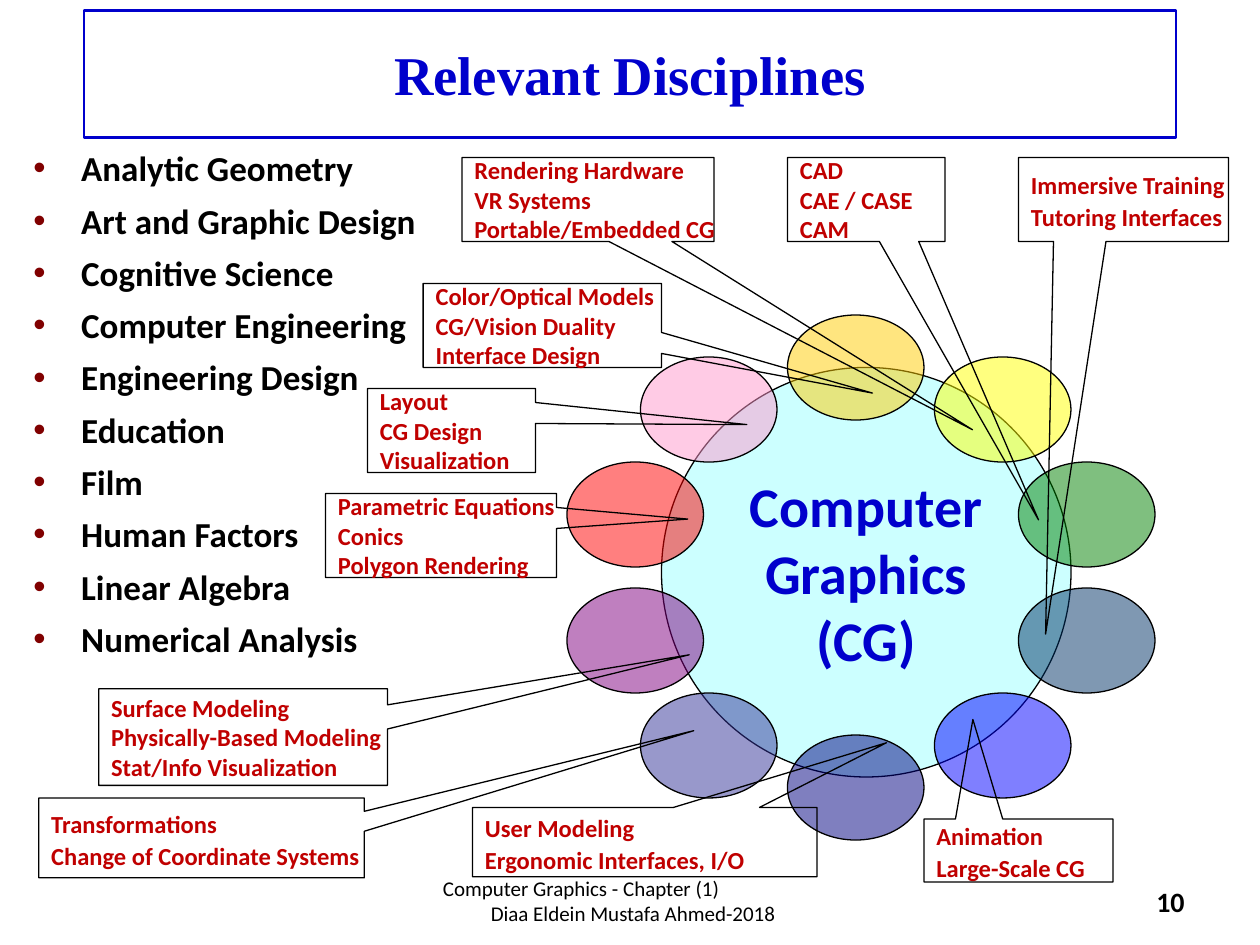
import pptx
import pptx.dml.color
import pptx.enum.shapes
import pptx.enum.text
import pptx.oxml
import pptx.oxml.ns
import pptx.util

RGBColor = pptx.dml.color.RGBColor
PRESET = pptx.enum.shapes.MSO_SHAPE
ALIGN = pptx.enum.text.PP_ALIGN
MIDDLE = pptx.enum.text.MSO_ANCHOR.MIDDLE

BLUE = RGBColor(0x00, 0x00, 0xCC)
BLACK = RGBColor(0x00, 0x00, 0x00)
CRIMSON = RGBColor(0xC0, 0x00, 0x00)
MAROON = RGBColor(0x80, 0x00, 0x00)
PALE_CYAN = RGBColor(0xCC, 0xFF, 0xFF)

# The slide is a grid of 120 columns by 90 rows, boxes are (column, row, columns, rows)
COLUMNS, ROWS = 120, 90
SLIDE_WIDTH, SLIDE_HEIGHT = pptx.util.Inches(10), pptx.util.Inches(7.5)

DISCIPLINES = [
    "Analytic Geometry", "Art and Graphic Design", "Cognitive Science",
    "Computer Engineering", "Engineering Design", "Education", "Film",
    "Human Factors", "Linear Algebra", "Numerical Analysis",
]

# Column and row within the ring, colour
PETAL_SIZE = (13, 10)
PETALS = [
    (0, 26, RGBColor(0x80, 0x00, 0x80)),
    (7, 36, RGBColor(0x33, 0x33, 0x99)),
    (35, 36, RGBColor(0x00, 0x00, 0xFF)),
    (21, 40, RGBColor(0x00, 0x00, 0x80)),
    (43, 26, RGBColor(0x00, 0x33, 0x66)),
    (0, 14, RGBColor(0xFF, 0x00, 0x00)),
    (7, 4, RGBColor(0xFF, 0x99, 0xCC)),
    (35, 4, RGBColor(0xFF, 0xFF, 0x00)),
    (21, 0, RGBColor(0xFF, 0xCC, 0x00)),
    (43, 14, RGBColor(0x00, 0x80, 0x00)),
]

# Box, pointer tip as shares of the box from its centre, lines
CALLOUTS = [
    ((31, 47, 22, 8), (1.068, -0.195),
     ["Parametric Equations", "Conics", "Polygon Rendering"]),
    ((35, 37, 16, 8), (1.758, -0.07), ["Layout", "CG Design", "Visualization"]),
    ((44, 15, 24, 8), (1.526, 2.742),
     ["Rendering Hardware", "VR Systems", "Portable/Embedded CG"]),
    ((40.3, 27, 22.7, 8), (1.385, 0.805),
     ["Color/Optical Models", "CG/Vision Duality", "Interface Design"]),
    ((75, 15, 15, 8), (1.094, 3.815), ["CAD", "CAE / CASE", "CAM"]),
    ((97, 15, 20, 8), (-0.371, 5.174), ["Immersive Training", "Tutoring Interfaces"]),
    ((88, 78, 18, 6), (-0.241, -2.08), ["Animation", "Large-Scale CG"]),
    ((45, 76.9, 32.8, 6.6), (0.702, -1.434),
     ["User Modeling", "Ergonomic Interfaces, I/O"]),
    ((3.7, 76, 31, 7.6), (1.512, -1.344),
     ["Transformations", "Change of Coordinate Systems"]),
    ((9.4, 65.6, 27.5, 9.2), (1.545, -0.852),
     ["Surface Modeling", "Physically-Based Modeling", "Stat/Info Visualization"]),
]


def place(box):
    """Turn a grid box into left, top, width and height."""
    column, row, columns, rows = box
    cell_width, cell_height = SLIDE_WIDTH / COLUMNS, SLIDE_HEIGHT / ROWS
    return (int(column * cell_width), int(row * cell_height),
            int(columns * cell_width), int(rows * cell_height))


def add_outlined(shapes, preset, box, fill=None, line=BLACK, weight=0.75):
    shape = shapes.add_shape(preset, *place(box))
    shape.shadow.inherit = False
    if fill is None:
        shape.fill.background()
    else:
        shape.fill.solid()
        shape.fill.fore_color.rgb = fill
    shape.line.color.rgb = line
    shape.line.width = pptx.util.Pt(weight)
    return shape


def write(shape, lines, size, color, align=ALIGN.LEFT, font="Calibri",
          bold=True, wrap=True, anchor=MIDDLE, spacing=1.0):
    frame = shape.text_frame
    frame.word_wrap = wrap
    frame.vertical_anchor = anchor
    frame.text = "\n".join(lines)
    for paragraph in frame.paragraphs:
        paragraph.alignment = align
        paragraph.line_spacing = spacing
        paragraph.font.size = pptx.util.Pt(size)
        paragraph.font.name = font
        paragraph.font.bold = bold
        paragraph.font.color.rgb = color
    return frame


def hang(paragraph, indent):
    properties = paragraph._p.get_or_add_pPr()
    properties.set("marL", str(pptx.util.Inches(indent)))
    properties.set("indent", str(-pptx.util.Inches(indent)))
    return properties


def add_bullet(paragraph, color):
    properties = hang(paragraph, 0.38)
    namespace = pptx.oxml.ns.nsdecls("a")
    bullet = [
        f'<a:buClr {namespace}><a:srgbClr val="{color}"/></a:buClr>',
        f'<a:buFont {namespace} typeface="Arial"/>',
        f'<a:buChar {namespace} char="•"/>',
    ]
    # Bullet elements stand before the default run properties
    for xml in bullet:
        properties.find(pptx.oxml.ns.qn("a:defRPr")).addprevious(
            pptx.oxml.parse_xml(xml))


def add_disciplines(slide, box):
    listing = slide.shapes.add_textbox(*place(box))
    frame = write(listing, DISCIPLINES, 20, BLACK, spacing=1.1,
                  anchor=pptx.enum.text.MSO_ANCHOR.TOP)
    for index, paragraph in enumerate(frame.paragraphs):
        add_bullet(paragraph, MAROON)
        if index:
            paragraph.space_before = pptx.util.Pt(3.5)


def add_title(slide, box):
    title = add_outlined(slide.shapes, PRESET.RECTANGLE, box, line=BLUE, weight=1.5)
    write(title, ["Relevant Disciplines"], 31.2, BLUE, ALIGN.CENTER, "Times New Roman")


def add_hub(slide, box):
    hub = add_outlined(slide.shapes, PRESET.OVAL, box, PALE_CYAN)
    write(hub, ["Computer", "Graphics", "(CG)"], 32, BLUE, ALIGN.CENTER, wrap=False)


def add_ring(slide, box):
    ring = slide.shapes.add_group_shape()
    for column, row, color in PETALS:
        petal = add_outlined(ring.shapes, PRESET.OVAL,
                             (box[0] + column, box[1] + row, *PETAL_SIZE), color)
        # Half transparent fill
        tint = petal.fill._xPr.find(".//" + pptx.oxml.ns.qn("a:srgbClr"))
        tint.append(pptx.oxml.parse_xml(
            f'<a:alpha {pptx.oxml.ns.nsdecls("a")} val="50000"/>'))


def add_callout(slide, box, tip, lines):
    callout = add_outlined(slide.shapes, PRESET.RECTANGULAR_CALLOUT, box)
    callout.adjustments[0], callout.adjustments[1] = tip
    write(callout, lines, 14, CRIMSON, wrap=False,
          spacing=1.1 if len(lines) == 2 else 1.0)


def add_footer(slide, credit_box, number_box):
    credit = slide.shapes.add_textbox(*place(credit_box))
    frame = write(credit, ["Computer Graphics - Chapter (1)\vDiaa Eldein Mustafa Ahmed-2018"],
                  12, BLACK, bold=False)
    hang(frame.paragraphs[0], 0.38)
    number = slide.shapes.add_textbox(*place(number_box))
    write(number, ["10"], 16, BLACK, ALIGN.RIGHT)


def main():
    deck = pptx.Presentation()
    deck.slide_width, deck.slide_height = SLIDE_WIDTH, SLIDE_HEIGHT
    slide = deck.slides.add_slide(deck.slide_layouts[6])
    add_disciplines(slide, (2, 13, 113, 71))
    add_title(slide, (8, 1, 104, 12.1))
    add_hub(slide, (63, 35, 39, 39))
    add_ring(slide, (54, 30, 56, 50))
    for box, tip, lines in CALLOUTS:
        add_callout(slide, box, tip, lines)
    add_footer(slide, (41, 83.4, 38, 4.8), (86, 83.4, 28, 4.8))
    deck.save("out.pptx")


if __name__ == "__main__":
    main()
